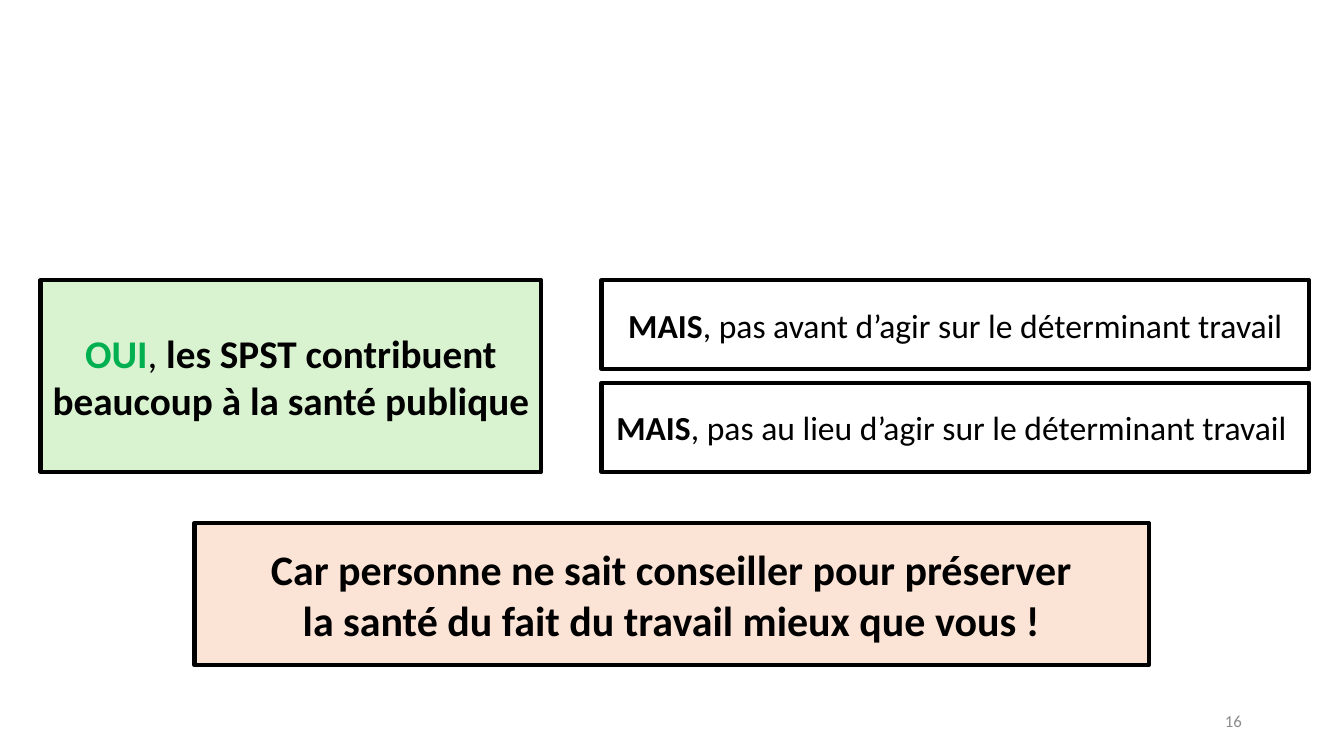
"""Build the slide on occupational health services and public health."""
import pptx
import pptx.dml.color
import pptx.enum.shapes
import pptx.enum.text
import pptx.util

Cm = pptx.util.Cm
ALIGN = pptx.enum.text.PP_ALIGN


def paint(target, color):
    """Give a fill or line format a solid colour, or a font its colour."""
    if hasattr(target, "fill"):
        target = target.fill
    target.solid()
    target.fore_color.rgb = pptx.dml.color.RGBColor.from_string(color)


def write(frame, lines, size, align):
    """Write lines of (text, bold, colour) runs into a text frame."""
    frame.word_wrap = True
    frame.vertical_anchor = pptx.enum.text.MSO_ANCHOR.MIDDLE
    for index, line in enumerate(lines):
        para = frame.add_paragraph() if index else frame.paragraphs[0]
        para.alignment = align
        for text, bold, color in line:
            run = para.add_run()
            run.text = text
            run.font.name = "Calibri"
            run.font.size = pptx.util.Pt(size)
            run.font.bold = bold
            paint(run.font, color)


def add_box(slide, place, fill, lines, size):
    """Add a black-framed rectangle with centred text."""
    box = slide.shapes.add_shape(
        pptx.enum.shapes.MSO_SHAPE.RECTANGLE, *map(Cm, place))
    box.shadow.inherit = False
    paint(box.fill, fill)
    paint(box.line, "000000")
    box.line.width = pptx.util.Pt(3)
    write(box.text_frame, lines, size, ALIGN.CENTER)


def add_label(slide, place, text, size, color):
    """Add a right-aligned text box."""
    label = slide.shapes.add_textbox(*map(Cm, place))
    write(label.text_frame, [[(text, False, color)]], size, ALIGN.RIGHT)


def main():
    """Build and save the slide."""
    deck = pptx.Presentation()
    deck.slide_width, deck.slide_height = Cm(33.87), Cm(19.05)
    slide = deck.slides.add_slide(deck.slide_layouts[6])

    add_label(slide, (23.93, 17.65, 7.62, 1.02), "16", 12, "8C8C8C")
    add_box(slide, (1.02, 7.06, 12.62, 4.83), "D9F2D0", [[
        ("OUI", True, "00B050"),
        (", ", False, "000000"),
        ("les SPST contribuent beaucoup à la santé publique", True, "000000"),
    ]], 28)

    limits = (", pas avant d’agir sur le déterminant travail",
              ", pas au lieu d’agir sur le déterminant travail ")
    for row, limit in enumerate(limits):
        add_box(slide, (15.16, 7.06 + 2.59 * row, 17.83, 2.24), "FFFFFF", [[
            ("MAIS", True, "000000"), (limit, False, "000000")]], 24)

    reason = ("Car personne ne sait conseiller pour préserver",
              "la santé du fait du travail mieux que vous !")
    add_box(slide, (4.9, 13.18, 24.05, 3.58), "FBE3D6",
            [[(line, True, "000000")] for line in reason], 30)

    deck.save("out.pptx")


if __name__ == "__main__":
    main()
